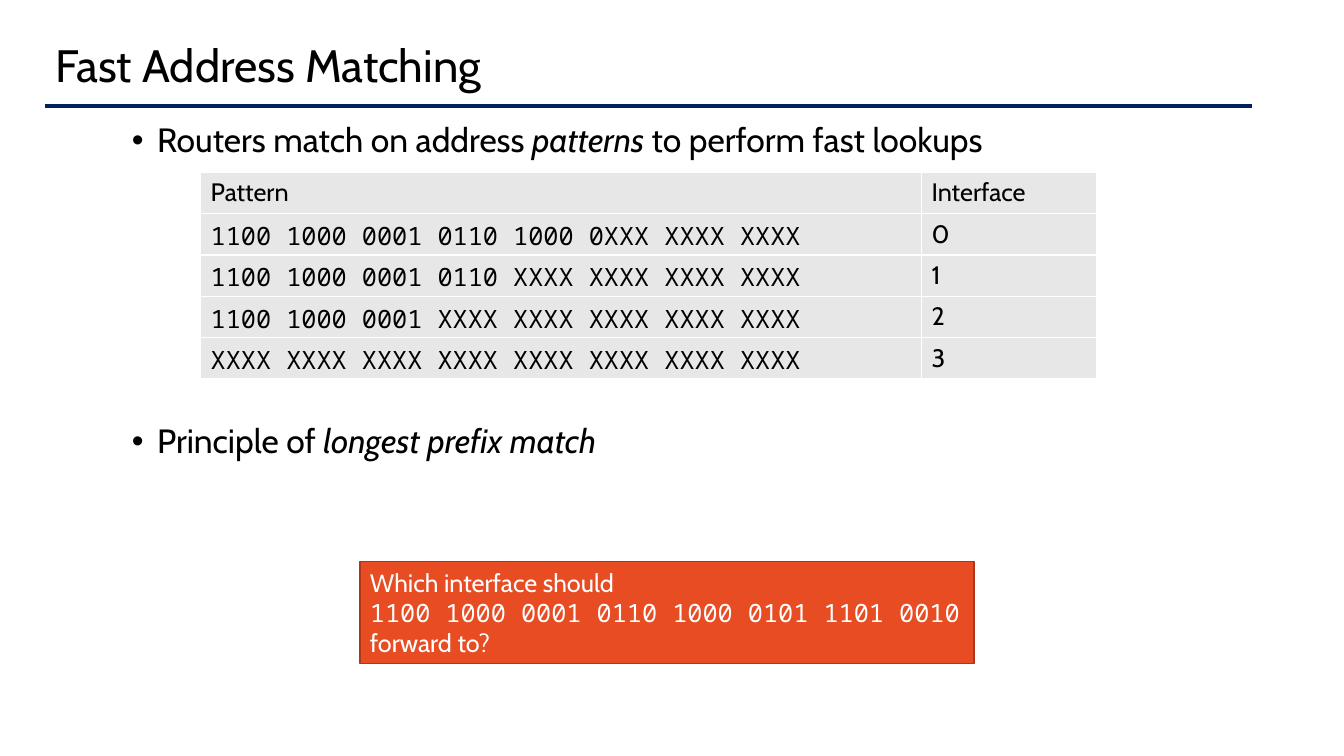
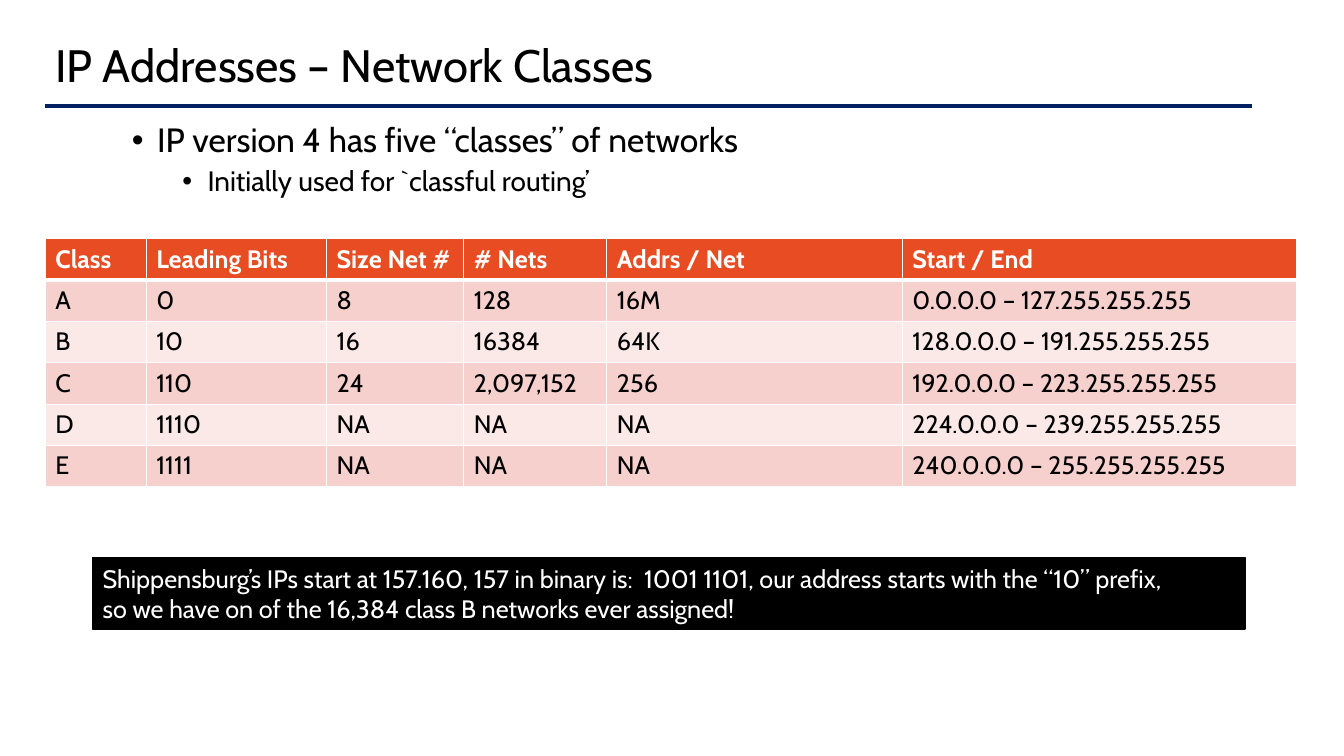
from lxml.etree import SubElement
from pptx import Presentation
from pptx.dml.color import RGBColor
from pptx.enum.shapes import MSO_CONNECTOR, MSO_SHAPE
from pptx.enum.text import MSO_ANCHOR, PP_ALIGN
from pptx.oxml.ns import qn
from pptx.util import Inches, Pt

COLORS = {
    "text": "000000", "light": "FFFFFF", "rule": "002060",
    "accent": "E84C22", "accent_edge": "AC3819", "gray": "E7E7E7",
    "band_dark": "F6D0CD", "band_light": "FBE9E8",
}
SANS, MONO = "Cabin", "Noto Sans Mono"
ITALIC = {"italic": True}
BULLET_LEVELS = [{"size": 24, "margin": 0.25}, {"size": 20, "margin": 0.75}]
HANGING = 0.25
ROW_HEIGHT = 0.41

# A run is (text, format); a bullet is (level, points before, runs).
SLIDES = [
    {
        "title": "Fast Address Matching",
        "bullets": [
            (0, 0, [("Routers match on address ", {}), ("patterns", ITALIC),
                    (" to perform fast lookups", {})]),
            (0, 189, [("Principle of ", {}), ("longest prefix match", ITALIC)]),
        ],
        "table": {
            "left": 1.99, "top": 1.71, "widths": [7.15, 1.74],
            "header": {"fill": "gray", "color": "text", "bold": False, "rule": 1},
            "bands": ["gray"], "fonts": [MONO, SANS],
            "rows": [
                ("Pattern", "Interface"),
                ("1100 1000 0001 0110 1000 0XXX XXXX XXXX", "0"),
                ("1100 1000 0001 0110 XXXX XXXX XXXX XXXX", "1"),
                ("1100 1000 0001 XXXX XXXX XXXX XXXX XXXX", "2"),
                ("XXXX XXXX XXXX XXXX XXXX XXXX XXXX XXXX", "3"),
            ],
        },
        "callout": {
            "box": (3.57, 5.57, 6.09, 1.01), "fill": "accent", "edge": "accent_edge",
            "lines": [
                ("Which interface should", {}),
                ("1100 1000 0001 0110 1000 0101 1101 0010", {"name": MONO}),
                ("forward to?", {}),
            ],
        },
    },
    {
        "title": "IP Addresses – Network Classes",
        "bullets": [
            (0, 0, [("IP version 4 has five “classes” of networks", {})]),
            (1, 5, [("Initially used for `classful routing’", {})]),
        ],
        "table": {
            "left": 0.45, "top": 2.37, "widths": [1, 1.79, 1.36, 1.42, 2.93, 3.91],
            "header": {"fill": "accent", "color": "light", "bold": True, "rule": 3},
            "bands": ["band_dark", "band_light"], "fonts": [SANS] * 6,
            "rows": [
                ("Class", "Leading Bits", "Size Net #", "# Nets", "Addrs / Net", "Start / End"),
                ("A", "0", "8", "128", "16M", "0.0.0.0 – 127.255.255.255"),
                ("B", "10", "16", "16384", "64K", "128.0.0.0 – 191.255.255.255"),
                ("C", "110", "24", "2,097,152", "256", "192.0.0.0 – 223.255.255.255"),
                ("D", "1110", "NA", "NA", "NA", "224.0.0.0 – 239.255.255.255"),
                ("E", "1111", "NA", "NA", "NA", "240.0.0.0 – 255.255.255.255"),
            ],
        },
        "callout": {
            "box": (0.92, 5.53, 11.43, 0.71), "fill": "text", "edge": "text",
            "lines": [
                ("Shippensburg’s IPs start at 157.160, 157 in binary is:  1001 1101, "
                 "our address starts with the “10” prefix,", {}),
                ("so we have on of the 16,384 class B networks ever assigned!", {}),
            ],
        },
    },
]


def rgb(color):
    return RGBColor.from_string(COLORS[color])


def add_run(paragraph, text, size, color="text", **formats):
    run = paragraph.add_run()
    run.text = text
    for attribute, value in {"name": SANS, "size": Pt(size), **formats}.items():
        setattr(run.font, attribute, value)
    run.font.color.rgb = rgb(color)


def add_text_frame(slide, left, top, width, height):
    frame = slide.shapes.add_textbox(*map(Inches, (left, top, width, height))).text_frame
    frame.word_wrap = True
    return frame


def add_heading(slide, title):
    rule = slide.shapes.add_connector(
        MSO_CONNECTOR.STRAIGHT, Inches(0.45), Inches(1.05), Inches(12.42), Inches(1.05))
    rule.line.color.rgb = rgb("rule")
    rule.line.width = Pt(2.5)
    SubElement(rule._element.spPr, qn("a:effectLst"))

    frame = add_text_frame(slide, 0.45, 0.4, 11.97, 0.54)
    frame.vertical_anchor = MSO_ANCHOR.MIDDLE
    frame.paragraphs[0].line_spacing = 0.9
    add_run(frame.paragraphs[0], title, 32.4)


def add_bullets(slide, bullets):
    frame = add_text_frame(slide, 1.21, 1.18, 11.21, 5.57)
    for index, (level, space_before, runs) in enumerate(bullets):
        paragraph = frame.add_paragraph() if index else frame.paragraphs[0]
        style = BULLET_LEVELS[level]
        properties = paragraph._p.get_or_add_pPr()
        properties.set("marL", str(Inches(style["margin"])))
        properties.set("indent", str(-Inches(HANGING)))
        SubElement(properties, qn("a:buFont"), typeface="Arial")
        SubElement(properties, qn("a:buChar"), char="•")
        paragraph.level = level
        paragraph.line_spacing = 0.9
        paragraph.space_before = Pt(space_before)
        for text, formats in runs:
            add_run(paragraph, text, style["size"], **formats)


def set_borders(cell, top, bottom):
    """Draw white cell edges; top and bottom are widths in points."""
    properties = cell._tc.get_or_add_tcPr()
    for edge, points in {"lnL": 1, "lnR": 1, "lnT": top, "lnB": bottom}.items():
        line = SubElement(properties, qn(f"a:{edge}"), w=str(Pt(points)))
        fill = SubElement(line, qn("a:solidFill"))
        SubElement(fill, qn("a:srgbClr"), val=COLORS["light"])


def add_grid(slide, content):
    rows, widths, header = content["rows"], content["widths"], content["header"]
    table = slide.shapes.add_table(
        len(rows), len(widths), Inches(content["left"]), Inches(content["top"]),
        Inches(sum(widths)), Inches(ROW_HEIGHT * len(rows))).table
    table.first_row = table.horz_banding = False
    for column, width in zip(table.columns, widths):
        column.width = Inches(width)

    for r, values in enumerate(rows):
        table.rows[r].height = Inches(ROW_HEIGHT)
        is_header = r == 0
        bands = content["bands"]
        fill = header["fill"] if is_header else bands[(r - 1) % len(bands)]
        for c, value in enumerate(values):
            cell = table.cell(r, c)
            set_borders(cell, top=header["rule"] if r == 1 else 1,
                        bottom=header["rule"] if is_header else 1)
            cell.fill.solid()
            cell.fill.fore_color.rgb = rgb(fill)
            add_run(cell.text_frame.paragraphs[0], value, 18,
                    header["color"] if is_header else "text",
                    bold=is_header and header["bold"],
                    name=SANS if is_header else content["fonts"][c])


def add_callout(slide, content):
    box = slide.shapes.add_shape(MSO_SHAPE.RECTANGLE, *map(Inches, content["box"]))
    box.shadow.inherit = False
    box.fill.solid()
    box.fill.fore_color.rgb = rgb(content["fill"])
    box.line.color.rgb = rgb(content["edge"])
    box.line.width = Pt(1)
    frame = box.text_frame
    frame.word_wrap = True
    frame.vertical_anchor = MSO_ANCHOR.MIDDLE
    for index, (text, formats) in enumerate(content["lines"]):
        paragraph = frame.add_paragraph() if index else frame.paragraphs[0]
        paragraph.alignment = PP_ALIGN.LEFT
        add_run(paragraph, text, 18, "light", **formats)


def main():
    deck = Presentation()
    deck.slide_width, deck.slide_height = Inches(13.33), Inches(7.5)
    for content in SLIDES:
        slide = deck.slides.add_slide(deck.slide_layouts[6])
        add_heading(slide, content["title"])
        add_bullets(slide, content["bullets"])
        add_grid(slide, content["table"])
        add_callout(slide, content["callout"])
    deck.save("out.pptx")


if __name__ == "__main__":
    main()
